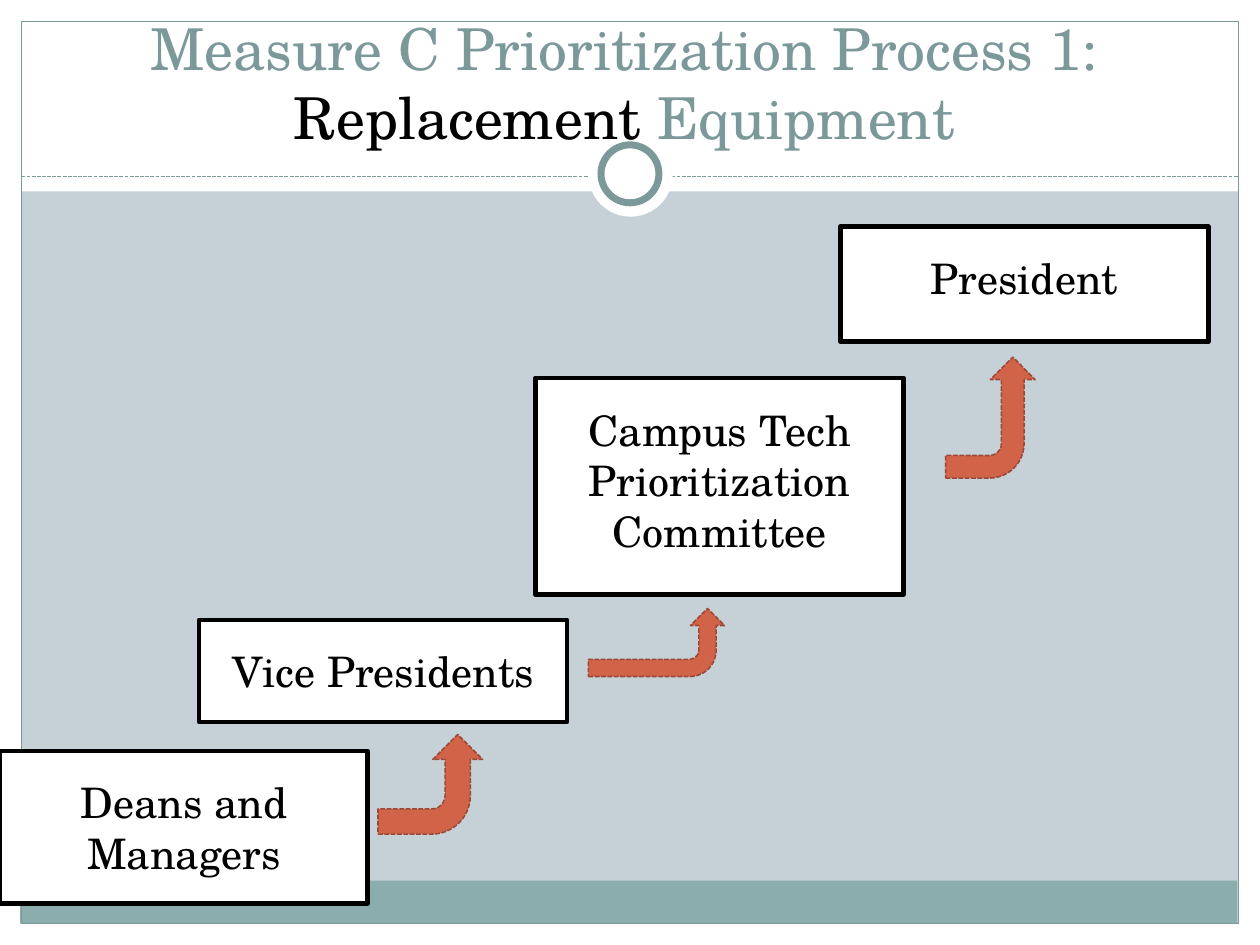
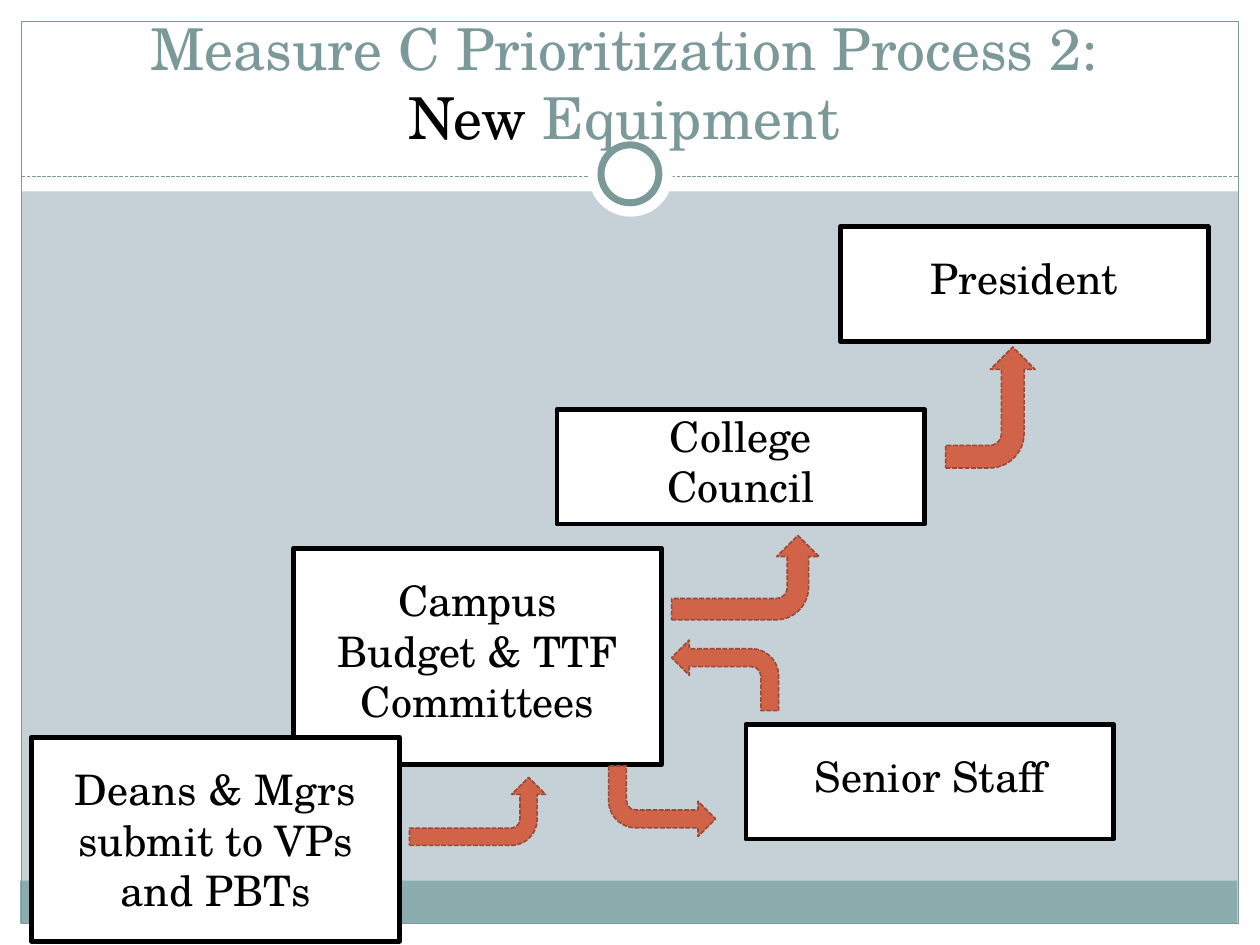
from lxml.etree import SubElement
from pptx import Presentation
from pptx.dml.color import RGBColor as RGB
from pptx.enum.dml import MSO_LINE as Dash
from pptx.enum.shapes import MSO_CONNECTOR as Link, MSO_SHAPE as Kind
from pptx.enum.text import MSO_ANCHOR as Anchor, MSO_AUTO_SIZE as Fit, PP_ALIGN as Align
from pptx.oxml.ns import qn
from pptx.util import Inches, Pt

COLORS = {
    "back": "C5D1D7",
    "white": "FFFFFF",
    "black": "000000",
    "teal": "7C999A",
    "band": "8CADAE",
    "rust": "D16349",
    "edge": "9B4936",
}
FONT = "TeX Gyre Schola"
WIDE, HIGH, RIM = 10, 7.5, 0.17
BOX = 2.92  # shared box width


def color(name):
    return RGB.from_string(COLORS[name])


class Deck:
    def __init__(self):
        self.prs = Presentation()
        self.prs.slide_width = Inches(WIDE)
        self.prs.slide_height = Inches(HIGH)
        self.slide = None

    def page(self, head, key, tail):
        """Start a slide with the shared frame and a two-line title."""
        self.slide = self.prs.slides.add_slide(self.prs.slide_layouts[5])
        fill = self.slide.background.fill
        fill.solid()
        fill.fore_color.rgb = color("back")
        self.frame()
        self.title(head, key, tail)

    def shape(self, kind, x, y, w, h, fill=None, line=None, width=0.75):
        item = self.slide.shapes.add_shape(
            kind, Inches(x), Inches(y), Inches(w), Inches(h))
        item.shadow.inherit = False
        if fill:
            item.fill.solid()
            item.fill.fore_color.rgb = color(fill)
        else:
            item.fill.background()
        if line:
            item.line.color.rgb = color(line)
            item.line.width = Pt(width)
        else:
            item.line.fill.background()
        return item

    def rule(self, x1, x2, y):
        item = self.slide.shapes.add_connector(
            Link.STRAIGHT, Inches(x1), Inches(y), Inches(x2), Inches(y))
        item.line.color.rgb = color("teal")
        item.line.width = Pt(0.75)
        item.line.dash_style = Dash.SQUARE_DOT
        SubElement(item.element.spPr, qn("a:effectLst"))

    def frame(self):
        # White margins and top panel
        for spot in ((0, HIGH - RIM, WIDE, RIM), (0, 0, WIDE, 1.52),
                     (0, 0, RIM, HIGH), (WIDE - RIM, 0, RIM, HIGH)):
            self.shape(Kind.RECTANGLE, *spot, "white")
        # Bottom band, outline and dashed rule
        span = WIDE - 2 * RIM
        self.shape(Kind.RECTANGLE, 0.16, 6.99, span, 0.34, "band")
        self.shape(Kind.RECTANGLE, RIM, RIM, span, HIGH - 2 * RIM, None, "teal")
        self.rule(RIM, WIDE - RIM, 1.4)
        # Ring
        self.shape(Kind.OVAL, 4.67, 1.05, 0.67, 0.67, "white")
        self.shape(Kind.OVAL, 4.77, 1.15, 0.46, 0.46, "white", "teal", 4)

    def run(self, para, text, size, tone):
        part = para.add_run()
        part.text = text
        part.font.name = FONT
        part.font.size = Pt(size)
        part.font.color.rgb = color(tone)

    def title(self, head, key, tail):
        item = self.slide.shapes.title
        item.left, item.top = Inches(0.25), Inches(0)
        item.width, item.height = Inches(9.41), Inches(1.25)
        frame = item.text_frame
        frame.auto_size = Fit.NONE
        frame.vertical_anchor = Anchor.BOTTOM
        para = frame.paragraphs[0]
        para.alignment = Align.CENTER
        self.run(para, head, 33, "teal")
        para.add_line_break()
        self.run(para, key, 33, "black")
        self.run(para, tail, 33, "teal")
        # Bring the title in front of the frame
        item.element.getparent().append(item.element)

    def box(self, text, x, y, h, pad=0.3):
        item = self.shape(Kind.RECTANGLE, x, y, BOX, h, "white", "black", 2.75)
        frame = item.text_frame
        frame.word_wrap = True
        frame.vertical_anchor = Anchor.MIDDLE
        frame.margin_top = Inches(0.2)
        frame.margin_left = frame.margin_right = frame.margin_bottom = Inches(pad)
        para = frame.paragraphs[0]
        para.alignment = Align.CENTER
        self.run(para, text, 24, "black")

    def bend(self, x, y, w, h, turn=270):
        """Bent arrow, flipped: 270 points up, 0 right, 180 left."""
        item = self.shape(Kind.BENT_ARROW, x, y, w, h, "rust", "edge", 0.9)
        item.line.dash_style = Dash.SQUARE_DOT
        for i, value in enumerate((0.253, 0.25, 0.25, 0.386)):
            item.adjustments[i] = value
        item.rotation = turn
        item.element.spPr.find(qn("a:xfrm")).set("flipV", "1")


def main():
    deck = Deck()

    # Replacement equipment
    deck.page("Measure C Prioritization Process 1:", "Replacement", " Equipment")
    deck.box("President", 6.67, 1.8, 0.91)
    deck.box("Campus Tech Prioritization Committee", 4.25, 3, 1.72)
    deck.box("Vice Presidents", 1.58, 4.92, 0.81, 0.2)
    deck.box("Deans and Managers", 0, 5.96, 1.21, 0.2)
    deck.bend(4.94, 4.56, 0.54, 1.08)
    deck.bend(7.38, 2.96, 0.96, 0.71)
    deck.bend(3.02, 5.81, 0.79, 0.83)

    # New equipment
    deck.page("Measure C Prioritization Process 2:", "New", " Equipment")
    deck.box("President", 6.67, 1.8, 0.91)
    deck.box("College Council", 4.42, 3.25, 0.91)
    deck.box("Campus Budget & TTF Committees", 2.33, 4.35, 1.72)
    deck.box("Deans & Mgrs submit to VPs and PBTs", 0.25, 5.85, 1.62, 0.2)
    deck.box("Senior Staff", 5.92, 5.75, 0.91)
    deck.bend(3.52, 5.9, 0.54, 1.08)
    deck.bend(5.58, 4, 0.67, 1.17)
    deck.bend(7.38, 2.88, 0.96, 0.71)
    deck.bend(4.83, 6.08, 0.85, 0.56, 0)
    deck.bend(5.33, 5.08, 0.85, 0.56, 180)

    deck.prs.save("out.pptx")


if __name__ == "__main__":
    main()
